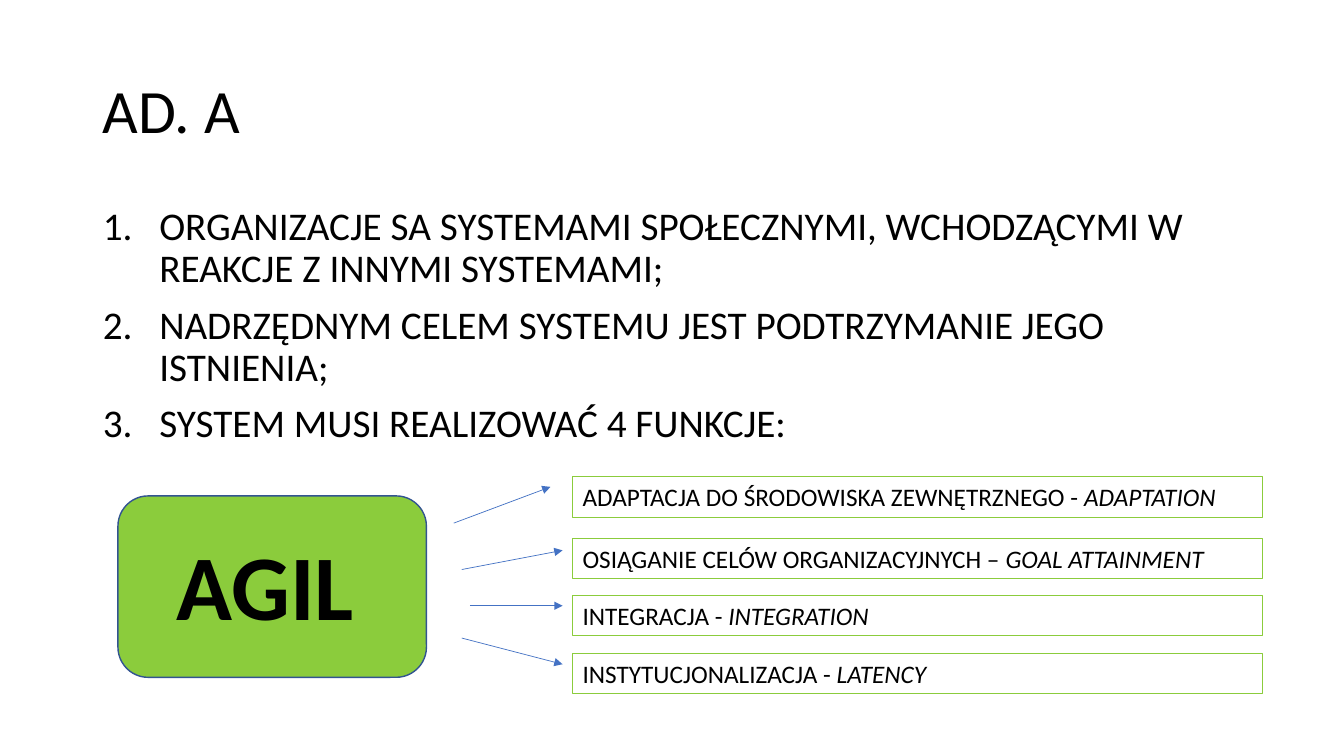
"""Build the AD. A slide about organisations as social systems and AGIL."""
from dataclasses import dataclass

from lxml import etree
from pptx import Presentation, util as u
from pptx.dml.color import RGBColor
from pptx.enum import shapes, text
from pptx.oxml import ns


@dataclass(frozen=True)
class Theme:
    font: str = "Calibri"
    ink: RGBColor = RGBColor(0, 0, 0)
    green: RGBColor = RGBColor(0x8B, 0xCC, 0x3C)
    edge: RGBColor = RGBColor(0x32, 0x54, 0x91)
    blue: RGBColor = RGBColor(0x44, 0x72, 0xC4)
    title: int = 44
    body: int = 28
    hero: int = 66
    label: int = 18


theme = Theme()


def place(shape, *box):
    shape.left, shape.top, shape.width, shape.height = map(u.Inches, box)


def style(para, size, bold=False):
    font = para.font
    font.name, font.size, font.bold = theme.font, u.Pt(size), bold
    font.color.rgb = theme.ink


deck = Presentation()
deck.slide_width, deck.slide_height = u.Inches(13.33), u.Inches(7.5)
slide = deck.slides.add_slide(deck.slide_layouts[1])
title, body = slide.placeholders

place(title, 0.92, 0.4, 11.5, 1.45)
title.text_frame.text = "AD. A"
title.text_frame.vertical_anchor = text.MSO_ANCHOR.MIDDLE
title.text_frame.auto_size = text.MSO_AUTO_SIZE.NONE
head = title.text_frame.paragraphs[0]
head.alignment = text.PP_ALIGN.LEFT
head.line_spacing = 0.9
style(head, theme.title)

points = [
    "ORGANIZACJE SA SYSTEMAMI SPOŁECZNYMI, WCHODZĄCYMI W REAKCJE Z INNYMI SYSTEMAMI;",
    "NADRZĘDNYM CELEM SYSTEMU JEST PODTRZYMANIE JEGO ISTNIENIA;",
    "SYSTEM MUSI REALIZOWAĆ 4 FUNKCJE:",
]
place(body, 0.92, 2, 11.5, 4.76)
body.text_frame.text = "\n".join(points)
body.text_frame.auto_size = text.MSO_AUTO_SIZE.NONE
for para in body.text_frame.paragraphs:
    para.line_spacing = 0.9
    para.space_before = u.Pt(10)
    props = para._p.get_or_add_pPr()
    props.set("marL", str(u.Inches(0.56)))
    props.set("indent", str(u.Inches(-0.56)))
    etree.SubElement(props, ns.qn("a:buFont"), typeface="+mj-lt")
    etree.SubElement(props, ns.qn("a:buAutoNum"), type="arabicPeriod")
    style(para, theme.body)

card = slide.shapes.add_shape(
    shapes.MSO_SHAPE.ROUNDED_RECTANGLE, *map(u.Inches, (1.17, 4.92, 3.06, 1.8)))
card.shadow.inherit = False
card.fill.solid()
card.fill.fore_color.rgb = theme.green
card.line.color.rgb = theme.edge
card.line.width = u.Pt(1)

hero = slide.shapes.add_textbox(*map(u.Inches, (1.65, 5.19, 2.53, 1.21)))
hero.text_frame.word_wrap = True
hero.text_frame.text = "AGIL"
style(hero.text_frame.paragraphs[0], theme.hero, bold=True)

arrows = [
    (4.5, 5.19, 5.46, 4.83),
    (4.58, 5.65, 5.58, 5.46),
    (4.66, 6.01, 5.58, 6.01),
    (4.58, 6.33, 5.58, 6.59),
]
for ends in arrows:
    arrow = slide.shapes.add_connector(
        shapes.MSO_CONNECTOR.STRAIGHT, *map(u.Inches, ends))
    arrow.line.color.rgb = theme.blue
    arrow.line.width = u.Pt(0.5)
    etree.SubElement(arrow.line._get_or_add_ln(), ns.qn("a:tailEnd"), type="triangle")
    etree.SubElement(arrow._element.spPr, ns.qn("a:effectLst"))

labels = [
    (4.73, "ADAPTACJA DO ŚRODOWISKA ZEWNĘTRZNEGO - ", "ADAPTATION"),
    (5.34, "OSIĄGANIE CELÓW ORGANIZACYJNYCH – ", "GOAL ATTAINMENT"),
    (5.91, "INTEGRACJA - ", "INTEGRATION"),
    (6.48, "INSTYTUCJONALIZACJA - ", "LATENCY"),
]
for top, name, term in labels:
    label = slide.shapes.add_textbox(*map(u.Inches, (5.68, top, 6.84, 0.4)))
    label.line.color.rgb = theme.green
    label.line.width = u.Pt(0.75)
    label.text_frame.word_wrap = True
    para = label.text_frame.paragraphs[0]
    style(para, theme.label)
    para.add_run().text = name
    run = para.add_run()
    run.text = term
    run.font.italic = True

deck.save("out.pptx")
